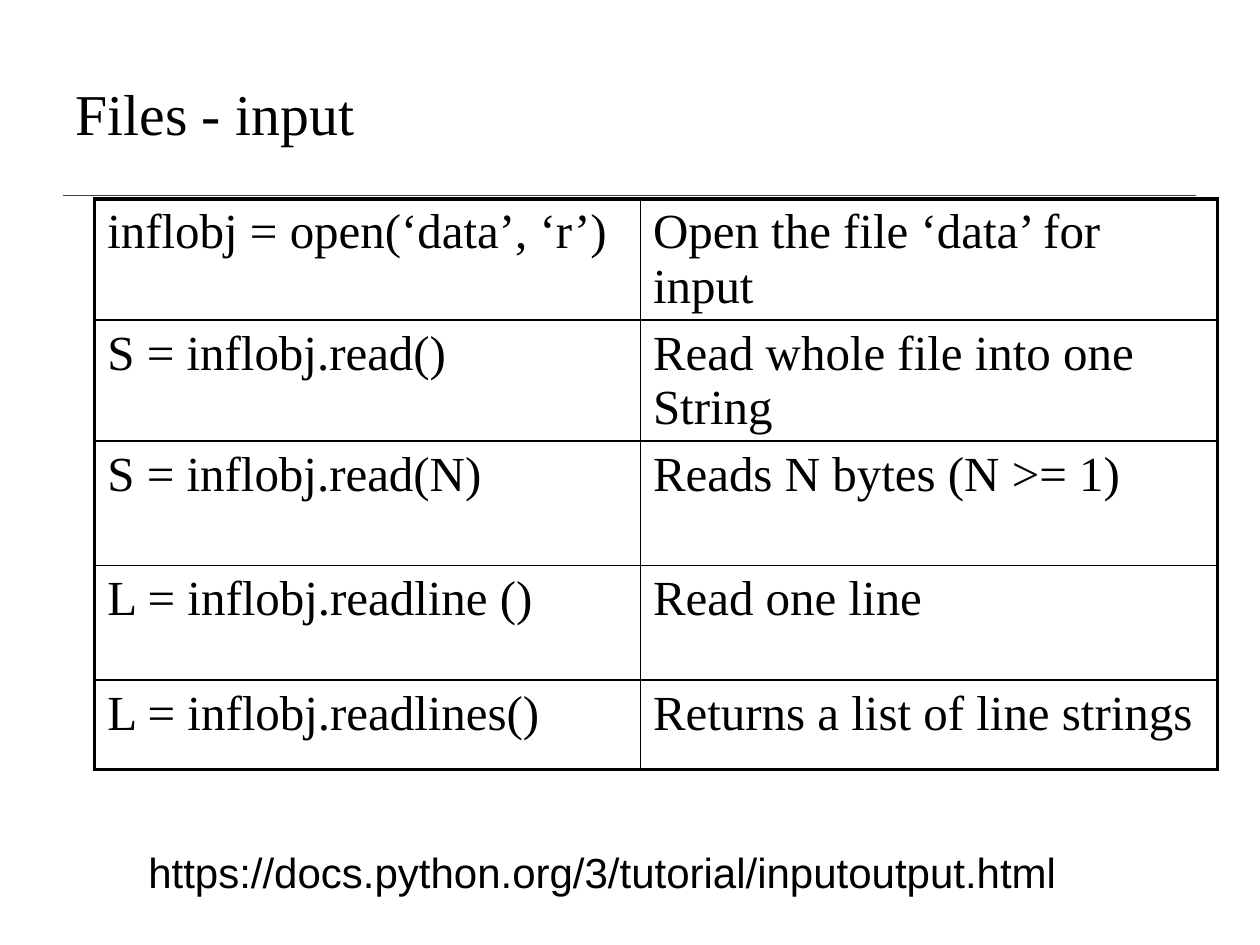
"""Build the slide on reading files in Python."""
from dataclasses import dataclass

import pptx
import pptx.dml.color
import pptx.enum.shapes
import pptx.enum.text
import pptx.oxml.ns
import pptx.slide
import pptx.table
import pptx.text.text
import pptx.util
from lxml import etree

Cm = pptx.util.Cm
Pt = pptx.util.Pt
BLACK = pptx.dml.color.RGBColor(0x00, 0x00, 0x00)
DARK_GREY = pptx.dml.color.RGBColor(0x40, 0x40, 0x40)
SERIF = "Times New Roman"
SANS = "Arial"
INNER_BORDER = Pt(1)
OUTER_BORDER = Pt(2.25)
COLUMN_WIDTHS = (Cm(11), Cm(11.63))


@dataclass(frozen=True)
class Caption:
    text: str
    left: float
    top: float
    width: float
    height: float
    font: str
    size: float
    anchor: pptx.enum.text.MSO_ANCHOR
    line_spacing: float


@dataclass(frozen=True)
class Operation:
    code: str
    meaning: str
    height: float


CAPTIONS = (
    Caption("Files - input", 1.27, 0.76, 22.86, 3.18, SERIF, 33,
            pptx.enum.text.MSO_ANCHOR.MIDDLE, 0.9),
    Caption("https://docs.python.org/3/tutorial/inputoutput.html", 2.74, 16.94,
            20.12, 1.27, SANS, 24, pptx.enum.text.MSO_ANCHOR.TOP, 1.0),
)
OPERATIONS = (
    Operation("inflobj = open(‘data’, ‘r’)", "Open the file ‘data’ for input", 2.31),
    Operation("S = inflobj.read()", "Read whole file into one String", 2.31),
    Operation("S = inflobj.read(N)", "Reads N bytes (N >= 1)", 2.51),
    Operation("L = inflobj.readline ()", "Read one line", 2.31),
    Operation("L = inflobj.readlines()", "Returns a list of line strings", 1.8),
)


def add_text(paragraph: pptx.text.text._Paragraph, text: str, font: str, size: float) -> None:
    run = paragraph.add_run()
    run.text = text
    run.font.name = font
    run.font.size = Pt(size)
    run.font.color.rgb = BLACK


def add_caption(slide: pptx.slide.Slide, caption: Caption) -> None:
    frame = slide.shapes.add_textbox(
        Cm(caption.left), Cm(caption.top), Cm(caption.width), Cm(caption.height)
    ).text_frame
    frame.word_wrap = True
    frame.vertical_anchor = caption.anchor
    paragraph = frame.paragraphs[0]
    paragraph.line_spacing = caption.line_spacing
    add_text(paragraph, caption.text, caption.font, caption.size)


def add_rule(slide: pptx.slide.Slide) -> None:
    rule = slide.shapes.add_connector(
        pptx.enum.shapes.MSO_CONNECTOR.STRAIGHT, Cm(1.27), Cm(3.94), Cm(24.1), Cm(3.94)
    )
    rule.line.color.rgb = DARK_GREY
    rule.line.width = Pt(1)
    etree.SubElement(rule._element.spPr, pptx.oxml.ns.qn("a:effectLst"))


def add_borders(cell: pptx.table._Cell, outer_sides: dict[str, bool]) -> None:
    qn = pptx.oxml.ns.qn
    properties = cell._tc.get_or_add_tcPr()
    for side, is_outer in outer_sides.items():
        width = OUTER_BORDER if is_outer else INNER_BORDER
        border = etree.SubElement(properties, qn(f"a:ln{side}"), w=str(int(width)))
        fill = etree.SubElement(border, qn("a:solidFill"))
        etree.SubElement(fill, qn("a:srgbClr"), val=str(BLACK))


def add_operations(slide: pptx.slide.Slide) -> None:
    last_row, last_column = len(OPERATIONS) - 1, len(COLUMN_WIDTHS) - 1
    total_height = sum(operation.height for operation in OPERATIONS)
    table = slide.shapes.add_table(
        len(OPERATIONS), len(COLUMN_WIDTHS), Cm(1.91), Cm(4.01),
        sum(COLUMN_WIDTHS), Cm(total_height)
    ).table
    table.first_row = False
    table.horz_banding = False
    for column, width in zip(table.columns, COLUMN_WIDTHS):
        column.width = width
    for row, operation in enumerate(OPERATIONS):
        table.rows[row].height = Cm(operation.height)
        for column, text in enumerate((operation.code, operation.meaning)):
            cell = table.cell(row, column)
            add_text(cell.text_frame.paragraphs[0], text, SERIF, 28)
            add_borders(cell, {
                "L": column == 0,
                "R": column == last_column,
                "T": row == 0,
                "B": row == last_row,
            })
            cell.fill.background()


def main() -> None:
    presentation = pptx.Presentation()
    presentation.slide_width = Cm(25.4)
    presentation.slide_height = Cm(19.05)
    slide = presentation.slides.add_slide(presentation.slide_layouts[6])
    add_rule(slide)
    add_operations(slide)
    for caption in CAPTIONS:
        add_caption(slide, caption)
    presentation.save("out.pptx")


if __name__ == "__main__":
    main()
